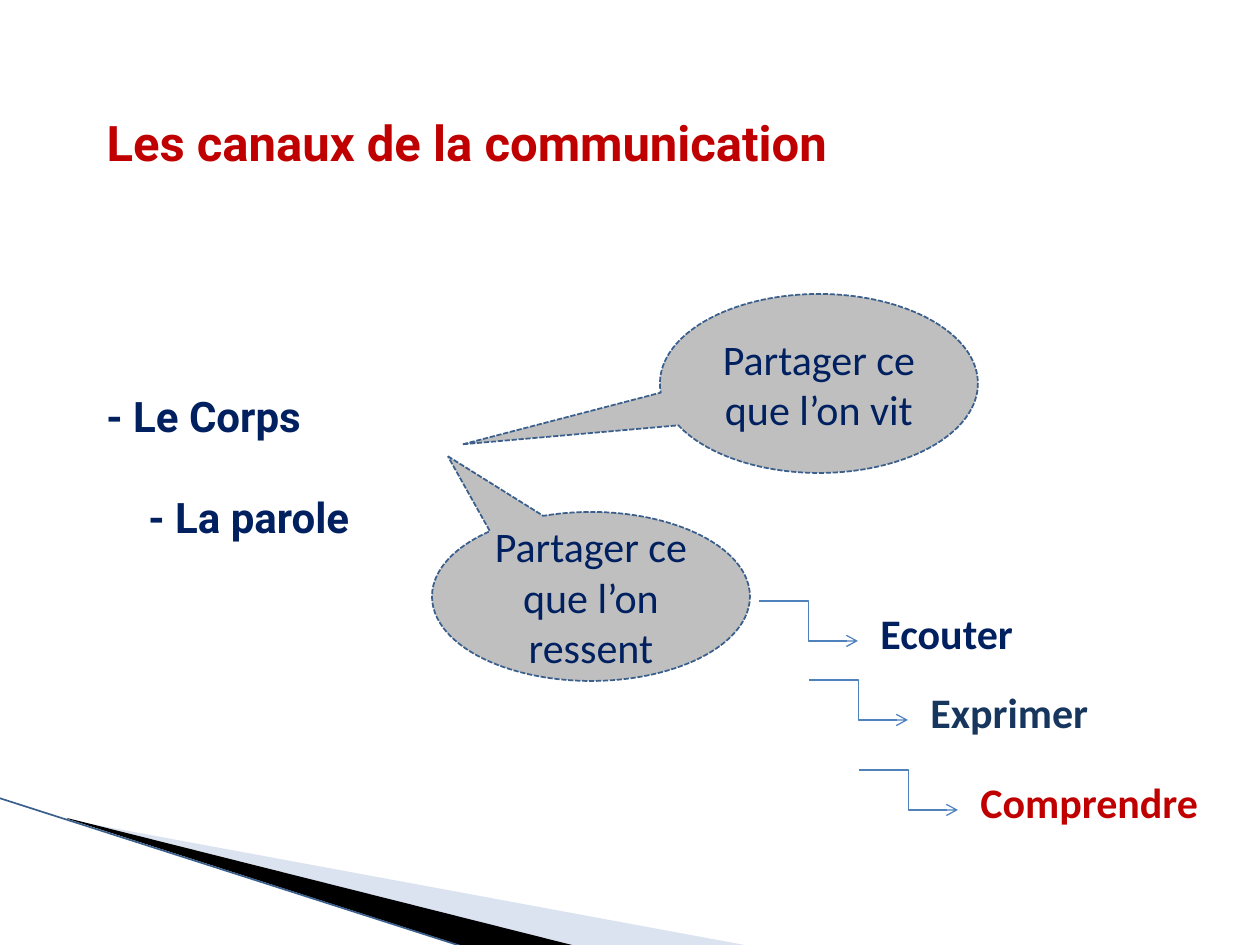
from dataclasses import dataclass

from pptx import Presentation
from pptx.dml.color import RGBColor
from pptx.enum.dml import MSO_LINE
from pptx.enum.shapes import MSO_CONNECTOR as Connector, MSO_SHAPE as Shape
from pptx.enum.text import MSO_ANCHOR as Anchor, MSO_AUTO_SIZE as AutoSize, PP_ALIGN as Align
from pptx.oxml.ns import qn
from pptx.util import Pt
from lxml.etree import SubElement

PX = 914400 / 126  # EMU in one px


@dataclass(frozen=True)
class Theme:
    heading_font: str = "Roboto"
    body_font: str = "Calibri"
    title_size: int = 28
    body_size: int = 24
    red: str = "C00000"
    navy: str = "002060"
    slate: str = "17365D"
    bubble: str = "BFBFBF"
    outline: str = "3A5F8C"
    arrow: str = "4F81BD"
    pale: str = "A7B9DB"
    black: str = "000000"


THEME = Theme()


def px(*lengths):
    return [round(length * PX) for length in lengths]


def rgb(value):
    return RGBColor.from_string(value)


def write(frame, lines, color, font, size=THEME.body_size, bold=True, align=Align.LEFT):
    """Fill a text frame with one paragraph per line."""
    frame.word_wrap = True
    frame.auto_size = AutoSize.NONE
    for index, line in enumerate(lines):
        para = frame.paragraphs[0] if index == 0 else frame.add_paragraph()
        para.text = line
        para.alignment = align
        para.font.name = font
        para.font.size = Pt(size)
        para.font.bold = bold
        para.font.color.rgb = rgb(color)


def add_line(page, kind, start, end, color, width):
    line = page.shapes.add_connector(kind, *px(*start, *end))
    line.line.color.rgb = rgb(color)
    line.line.width = Pt(width)
    SubElement(line._element.spPr, qn("a:effectLst"))
    return line


def add_swoosh(page, left, top):
    """Decoration in the lower left corner."""
    def blade(points, color):
        corners = [(left + x, top + y) for x, y in points]
        builder = page.shapes.build_freeform(*corners[0], scale=PX)
        builder.add_line_segments(corners[1:], close=True)
        shape = builder.convert_to_shape()
        shape.shadow.inherit = False
        shape.fill.solid()
        shape.fill.fore_color.rgb = rgb(color)
        shape.line.fill.background()
        return shape

    pale = blade([(70, 22), (751, 148), (576, 148)], THEME.pale)
    tint = pale._element.spPr.find(".//" + qn("a:srgbClr"))
    SubElement(tint, qn("a:alpha"), val="40000")
    blade([(68, 20), (577, 148), (470, 150), (69, 21)], THEME.black)
    add_line(page, Connector.STRAIGHT, (left, top), (left + 468, top + 150),
             THEME.outline, 0.95)


def add_title(page, box):
    title = page.shapes.title
    title.left, title.top, title.width, title.height = px(*box)
    title.text_frame.vertical_anchor = Anchor.TOP
    write(title.text_frame, ["Les canaux de la communication"], THEME.red,
          THEME.heading_font, THEME.title_size)


def add_channels(page, box):
    """The two channels, the second one indented."""
    frame = page.shapes.add_textbox(*px(*box)).text_frame
    write(frame, ["- Le Corps", "- La parole"], THEME.navy, THEME.heading_font)
    for para in frame.paragraphs:
        para.line_spacing = 2.0
    frame.paragraphs[1]._p.get_or_add_pPr().set("marL", str(px(42)[0]))


def add_bubble(page, box, text, tip):
    bubble = page.shapes.add_shape(Shape.OVAL_CALLOUT, *px(*box))
    bubble.adjustments[0], bubble.adjustments[1] = tip
    bubble.shadow.inherit = False
    bubble.fill.solid()
    bubble.fill.fore_color.rgb = rgb(THEME.bubble)
    bubble.line.color.rgb = rgb(THEME.outline)
    bubble.line.width = Pt(1)
    bubble.line.dash_style = MSO_LINE.SQUARE_DOT
    bubble.text_frame.vertical_anchor = Anchor.MIDDLE
    write(bubble.text_frame, [text], THEME.navy, THEME.body_font,
          bold=False, align=Align.CENTER)


def add_step(page, left, top, text, color):
    """A bent arrow leading to its label."""
    arrow = add_line(page, Connector.ELBOW, (left, top), (left + 99, top + 40),
                     THEME.arrow, 0.75)
    SubElement(arrow.line._get_or_add_ln(), qn("a:tailEnd"), type="arrow")
    label = page.shapes.add_textbox(*px(left + 109, top, 253, 63))
    write(label.text_frame, [text], color, THEME.body_font)


def add_steps(page, left, top):
    steps = [(0, "Ecouter", THEME.navy),
             (79, "Exprimer", THEME.slate),
             (169, "Comprendre", THEME.red)]
    for index, (drop, text, color) in enumerate(steps):
        add_step(page, left + 50 * index, top + drop, text, color)


def main():
    deck = Presentation()
    deck.slide_width, deck.slide_height = px(1260, 945)
    page = deck.slides.add_slide(deck.slide_layouts[5])  # title only
    add_swoosh(page, -1, 798)
    add_title(page, (94, 106, 843, 72))
    add_channels(page, (94, 334, 500, 170))
    add_bubble(page, (432, 512, 318, 169), "Partager ce que l’on ressent", (-0.45, -0.83))
    add_bubble(page, (660, 294, 318, 179), "Partager ce que l’on vit", (-1.12, 0.34))
    add_steps(page, 759, 601)
    deck.save("out.pptx")


if __name__ == "__main__":
    main()
